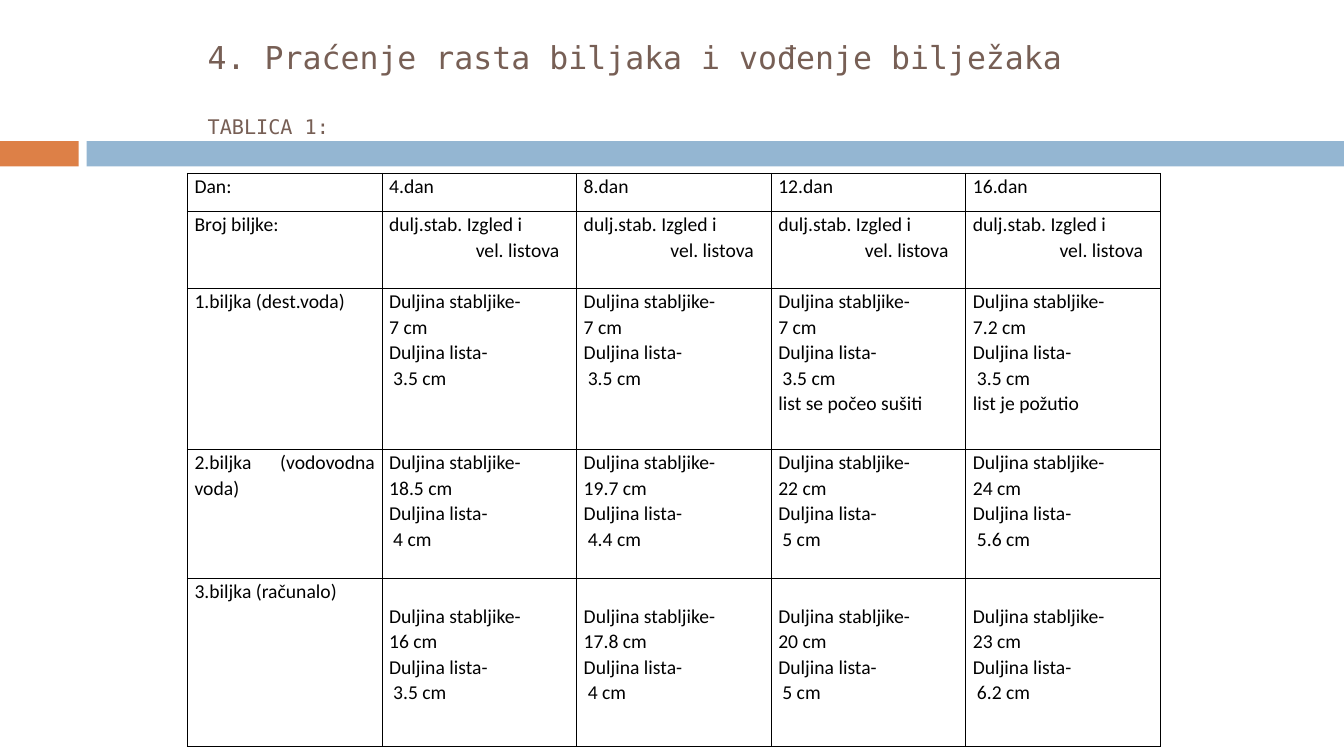
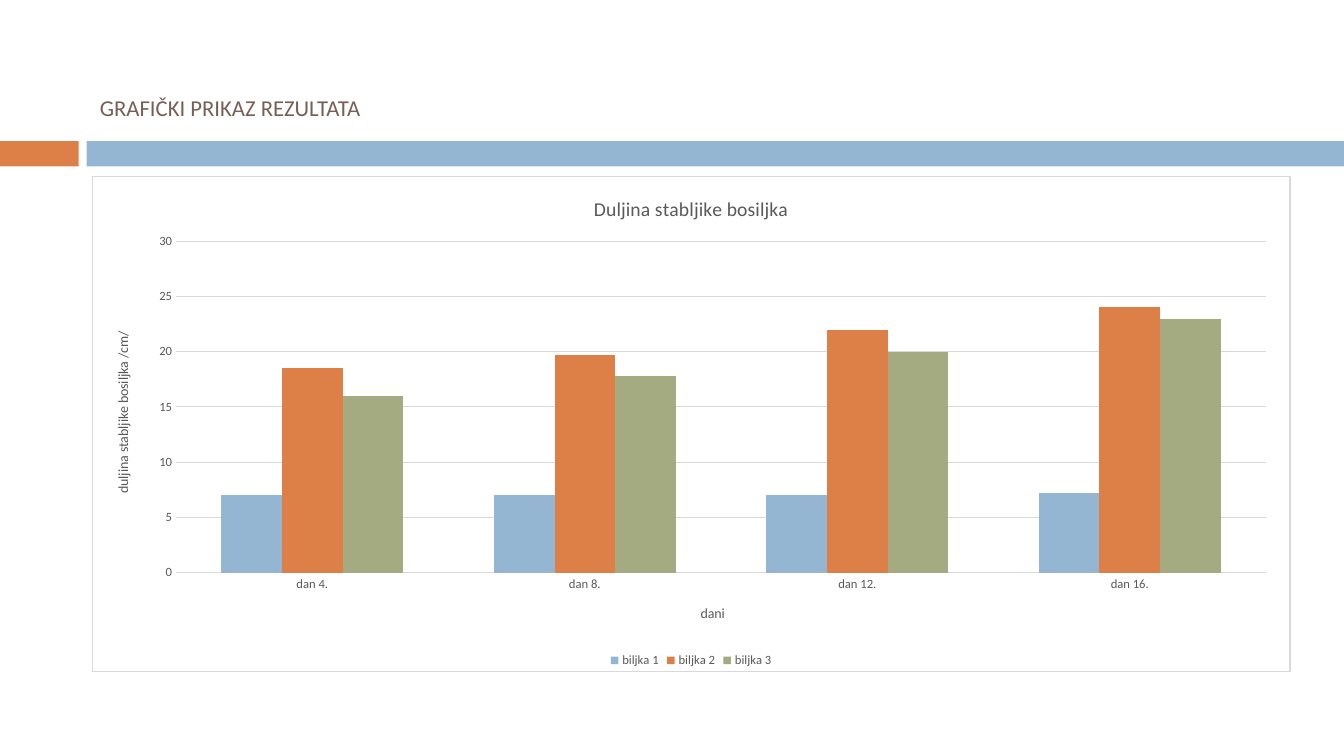
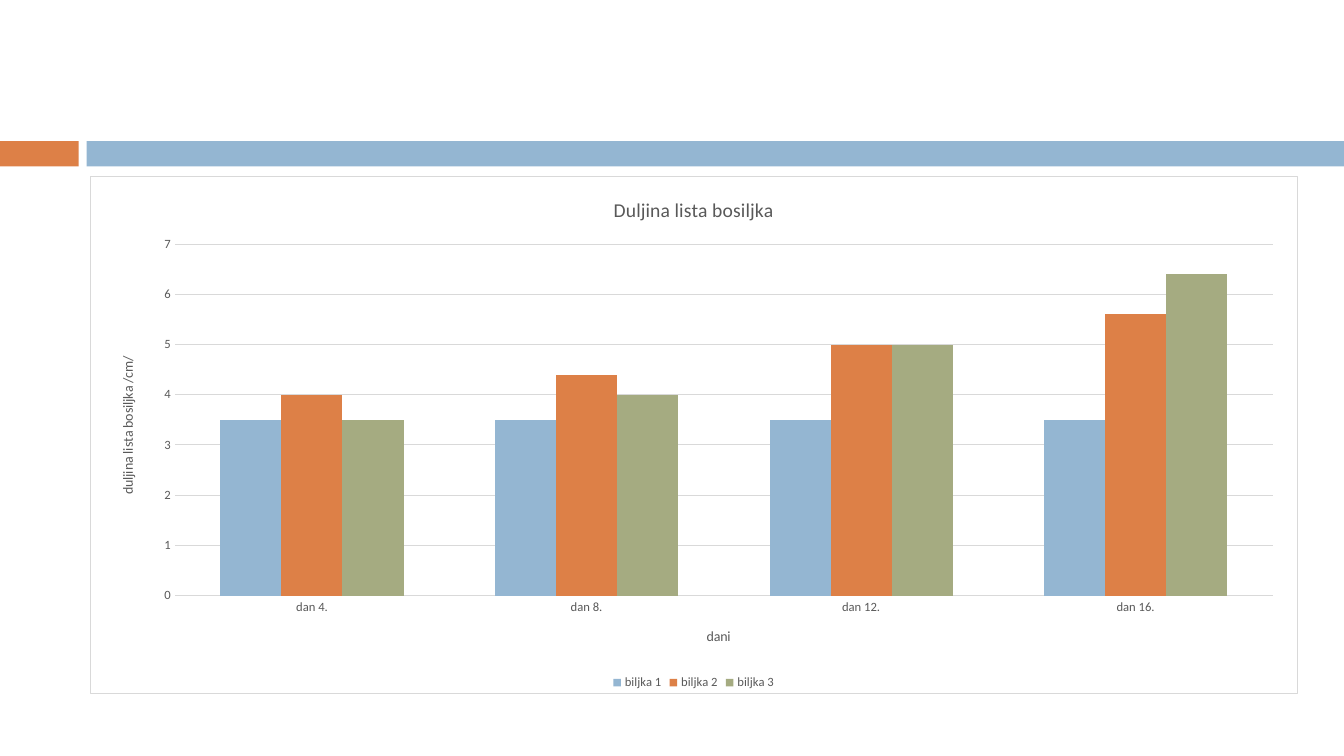
from dataclasses import dataclass, field
from typing import Any

from pptx import Presentation
from pptx.chart.data import CategoryChartData
from pptx.dml.color import RGBColor
from pptx.enum.chart import XL_CHART_TYPE, XL_LEGEND_POSITION, XL_TICK_MARK
from pptx.enum.shapes import MSO_SHAPE
from pptx.enum.text import MSO_ANCHOR, MSO_AUTO_SIZE, PP_ALIGN
from pptx.oxml import parse_xml
from pptx.oxml.ns import nsdecls, qn
from pptx.util import Inches, Pt

COLORS = {
    "blue": "94B6D2",
    "orange": "DD8047",
    "green": "A5AB81",
    "title": "775F55",
    "text": "000000",
    "chart_text": "595959",
    "grid": "D9D9D9",
    "white": "FFFFFF",
}
BODY_FONT = "Calibri"
MONO_FONT = "DejaVu Sans Mono"
TITLE_ONLY, BLANK = 5, 6


def rgb(name):
    return RGBColor.from_string(COLORS[name])


def set_font(font, size, color, family=BODY_FONT):
    font.size = Pt(size)
    font.name = family
    font.bold = False
    font.color.rgb = rgb(color)


@dataclass
class Deck:
    presentation: Any = field(default_factory=Presentation)
    slide: Any = None

    def set_size(self, width, height):
        self.presentation.slide_width = Inches(width)
        self.presentation.slide_height = Inches(height)

    def add_slide(self, layout):
        self.slide = self.presentation.slides.add_slide(
            self.presentation.slide_layouts[layout])
        self.band(0, 0.78, "orange")
        self.band(0.86, 12.47, "blue")

    def band(self, left, width, color):
        band = self.slide.shapes.add_shape(
            MSO_SHAPE.RECTANGLE, Inches(left), Inches(1.4), Inches(width), Inches(0.25))
        band.shadow.inherit = False
        band.fill.solid()
        band.fill.fore_color.rgb = rgb(color)
        band.line.fill.background()

    def title(self, box, lines, family=BODY_FONT, anchor=MSO_ANCHOR.MIDDLE,
              gap=0, bottom=0.05):
        title = self.slide.shapes.title
        title.left, title.top, title.width, title.height = map(Inches, box)
        frame = title.text_frame
        frame.auto_size = MSO_AUTO_SIZE.NONE
        frame.word_wrap = True
        frame.vertical_anchor = anchor
        frame.margin_bottom = Inches(bottom)
        frame.text = "\n".join(text for text, size in lines)
        for number, (paragraph, (text, size)) in enumerate(zip(frame.paragraphs, lines)):
            paragraph.alignment = PP_ALIGN.LEFT
            paragraph.space_before = Pt(gap if number else 0)
            set_font(paragraph.font, size, "title", family)

    def table(self, left, top, column_width, row_heights, rows):
        columns = len(rows[0])
        table = self.slide.shapes.add_table(
            len(rows), columns, Inches(left), Inches(top),
            Inches(column_width * columns), Inches(sum(row_heights))).table
        table.first_row = table.horz_banding = False
        for column in table.columns:
            column.width = Inches(column_width)
        for row, height, contents in zip(table.rows, row_heights, rows):
            row.height = Inches(height)
            for cell, lines in zip(row.cells, contents):
                self.cell(cell, lines)
        return table

    def cell(self, cell, lines):
        properties = cell._tc.get_or_add_tcPr()
        for side in ("lnL", "lnR", "lnT", "lnB"):
            properties.append(parse_xml(
                f'<a:{side} {nsdecls("a")} w="{Pt(1)}"><a:solidFill>'
                f'<a:srgbClr val="{COLORS["text"]}"/></a:solidFill></a:{side}>'))
        cell.fill.background()
        cell.margin_left = cell.margin_right = Inches(0.07)
        cell.margin_top = cell.margin_bottom = 0
        cell.text = "\n".join(text for text, indent in lines)
        for paragraph, (text, indent) in zip(cell.text_frame.paragraphs, lines):
            paragraph.alignment = PP_ALIGN.JUSTIFY
            paragraph.line_spacing = 1.07
            set_font(paragraph.font, 14, "text")
            paragraph._p.get_or_add_pPr().set("marL", str(Inches(indent)))

    def column_chart(self, box, title, axis_title, days, plants, top_value, step, plot_box):
        data = CategoryChartData()
        data.categories = days
        for name, values in plants.items():
            data.add_series(name, values)
        chart = self.slide.shapes.add_chart(
            XL_CHART_TYPE.COLUMN_CLUSTERED, *map(Inches, box), data).chart
        set_font(chart.font, 10, "text")
        self.heading(chart, title, 14)
        self.heading(chart.category_axis, "dani", 10)
        self.heading(chart.value_axis, axis_title, 10)

        chart.has_legend = True
        chart.legend.position = XL_LEGEND_POSITION.BOTTOM
        chart.legend.include_in_layout = False
        set_font(chart.legend.font, 9, "chart_text")

        for axis in (chart.category_axis, chart.value_axis):
            axis.major_tick_mark = axis.minor_tick_mark = XL_TICK_MARK.NONE
            axis.format.line.fill.background()
            set_font(axis.tick_labels.font, 9, "chart_text")
        chart.value_axis.minimum_scale = 0
        chart.value_axis.maximum_scale = top_value
        chart.value_axis.major_unit = step
        grid_line = chart.value_axis.major_gridlines.format.line
        grid_line.color.rgb = rgb("grid")
        grid_line.width = Pt(0.75)

        plot = chart.plots[0]
        plot.gap_width = 150
        plot.overlap = 0
        plot.vary_by_categories = False
        for series, color in zip(plot.series, ("blue", "orange", "green")):
            series.format.fill.solid()
            series.format.fill.fore_color.rgb = rgb(color)
        self.chart_frame(chart, plot_box)

    def heading(self, owner, text, size):
        owner.has_title = True
        heading = owner.chart_title if hasattr(owner, "chart_title") else owner.axis_title
        heading.text_frame.text = text
        set_font(heading.text_frame.paragraphs[0].font, size, "chart_text")

    def chart_frame(self, chart, plot_box):
        chart_part = chart._chartSpace.find(qn("c:chart"))
        chart_part.addnext(parse_xml(
            f'<c:spPr {nsdecls("c", "a")}>'
            f'<a:solidFill><a:srgbClr val="{COLORS["white"]}"/></a:solidFill>'
            f'<a:ln w="{Pt(0.75)}"><a:solidFill><a:srgbClr val="{COLORS["grid"]}"/>'
            '</a:solidFill></a:ln></c:spPr>'))
        plot_area = chart_part.find(qn("c:plotArea"))
        for layout in plot_area.findall(qn("c:layout")):
            plot_area.remove(layout)
        edges = "".join(f'<c:{key}Mode val="edge"/>' for key in "xy")
        lengths = "".join(f'<c:{key} val="{size}"/>' for key, size in zip("xywh", plot_box))
        plot_area.insert(0, parse_xml(
            f'<c:layout {nsdecls("c")}><c:manualLayout><c:layoutTarget val="inner"/>'
            f'{edges}{lengths}</c:manualLayout></c:layout>'))


def measurement(stem, leaf, remark=None):
    lines = [("Duljina stabljike-", 0), (f"{stem} cm", 0),
             ("Duljina lista-", 0), (f"{leaf} cm", 0.04)]
    return lines + [(remark, 0)] if remark else lines


def growth_rows():
    days = ["4.dan", "8.dan", "12.dan", "16.dan"]
    subheading = [("dulj.stab. Izgled i", 0), ("vel. listova", 0.86)]
    plants = {
        "1.biljka (dest.voda)": [
            (7, 3.5), (7, 3.5), (7, 3.5, "list se počeo sušiti"),
            (7.2, 3.5, "list je požutio")],
        "2.biljka (vodovodna voda)": [(18.5, 4), (19.7, 4.4), (22, 5), (24, 5.6)],
        "3.biljka (računalo)": [(16, 3.5), (17.8, 4), (20, 5), (23, 6.2)],
    }
    rows = [[[(text, 0)] for text in ["Dan:", *days]],
            [[("Broj biljke:", 0)]] + [subheading] * len(days)]
    for plant, values in plants.items():
        rows.append([[(plant, 0)]] + [measurement(*value) for value in values])
    return rows


def main():
    deck = Deck()
    deck.set_size(13.33, 7.5)
    days = ["dan 4.", "dan 8.", "dan 12.", "dan 16."]

    deck.add_slide(TITLE_ONLY)
    deck.title((1.96, 0.42, 10.12, 0.91),
               [("4. Praćenje rasta biljaka i vođenje bilježaka", 22.5),
                ("TABLICA 1:", 14.4)], MONO_FONT, gap=27)
    growth = deck.table(1.86, 1.72, 1.93, [0.38, 0.76, 1.6, 1.28, 1.67], growth_rows())
    for column in range(1, len(growth.columns)):
        growth.cell(4, column).margin_top = Inches(0.24)

    deck.add_slide(TITLE_ONLY)
    deck.title((0.89, 0.25, 11.89, 1.08), [("GRAFIČKI PRIKAZ REZULTATA", 16.2)],
               anchor=MSO_ANCHOR.BOTTOM, bottom=0.13)
    deck.column_chart(
        (0.91, 1.75, 11.89, 4.92), "Duljina stabljike bosiljka",
        "duljina stabljike bosiljka /cm/", days,
        {"biljka 1": (7, 7, 7, 7.2),
         "biljka 2": (18.5, 19.7, 22, 24),
         "biljka 3": (16, 17.8, 20, 23)}, 30, 5, (0.07, 0.13, 0.91, 0.67))

    deck.add_slide(BLANK)
    deck.column_chart(
        (0.89, 1.75, 11.98, 5.14), "Duljina lista bosiljka",
        "duljina lista bosiljka /cm/", days,
        {"biljka 1": (3.5, 3.5, 3.5, 3.5),
         "biljka 2": (4, 4.4, 5, 5.6),
         "biljka 3": (3.5, 4, 5, 6.4)}, 7, 1, (0.07, 0.13, 0.91, 0.68))

    deck.presentation.save("out.pptx")


if __name__ == "__main__":
    main()
